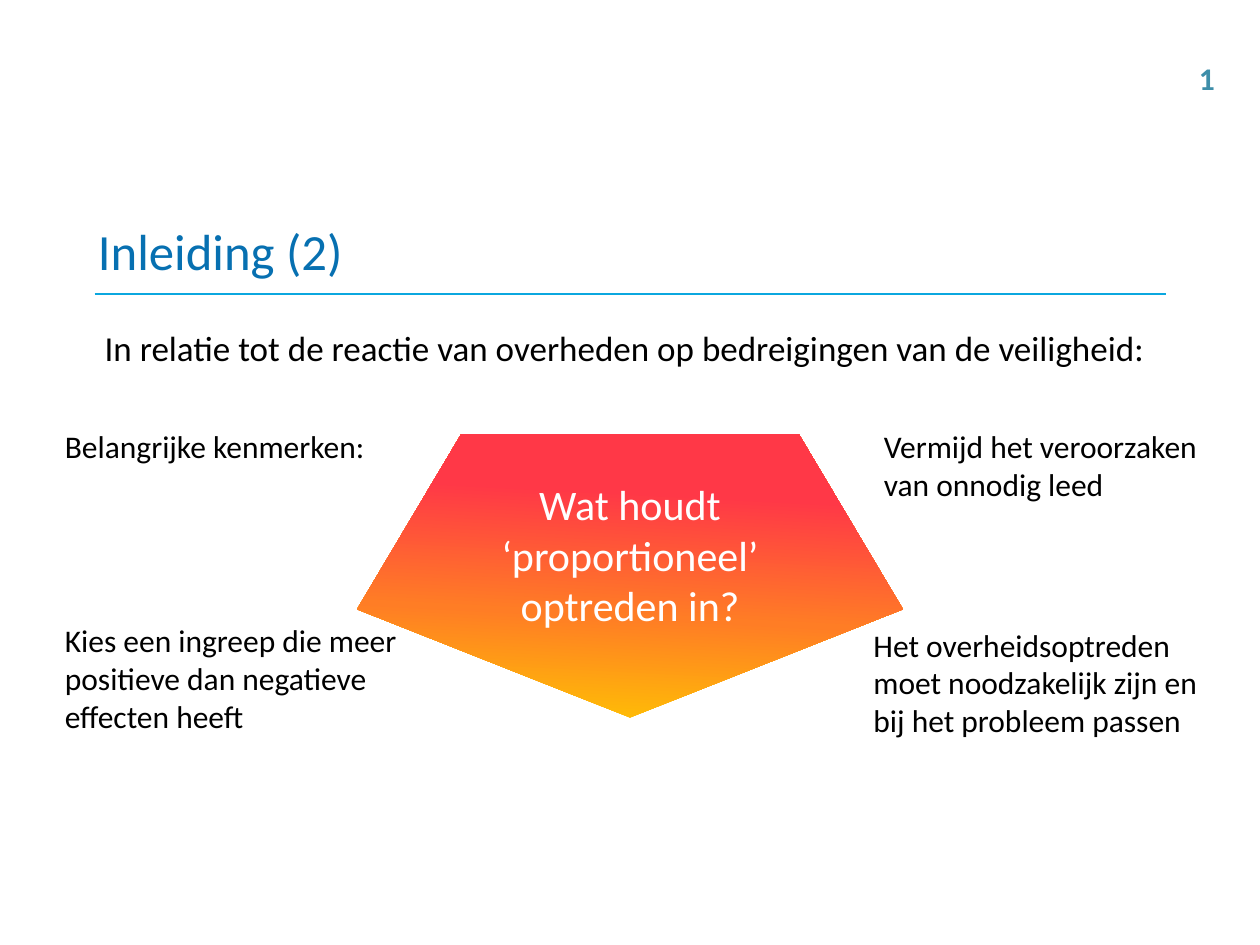
from lxml import etree
from pptx import Presentation
from pptx import util as u
from pptx.dml.color import RGBColor
from pptx.enum import shapes, text
from pptx.oxml.ns import qn

COLORS = {
    "white": "FFFFFF", "black": "000000", "title": "0770B1", "rule": "0BA7DF",
    "number": "3E8EA9", "yellow": "FFC203", "orange": "FF7D25", "red": "FF3847",
}


def rgb(name):
    return RGBColor.from_string(COLORS[name])


class Deck:
    """Holds the presentation, its font and the current slide."""

    font = "Calibri"

    def __init__(self, width, height):
        self.prs = Presentation()
        self.prs.slide_width, self.prs.slide_height = u.Pt(width), u.Pt(height)
        self.s = self.prs.slides.add_slide(self.prs.slide_layouts[6])

    def set_text(self, sp, words, size, color, align, bold=False):
        p = sp.text_frame.paragraphs[0]
        p.text = words
        p.alignment = align
        p.font.name, p.font.size, p.font.bold = self.font, u.Pt(size), bold
        p.font.color.rgb = rgb(color)

    def shape(self, kind, box):
        sp = self.s.shapes.add_shape(kind, *map(u.Pt, box))
        sp.shadow.inherit = False
        sp.line.fill.background()
        return sp

    def rule(self, x1, x2, y):
        cx = self.s.shapes.add_connector(
            shapes.MSO_CONNECTOR.STRAIGHT, u.Pt(x1), u.Pt(y), u.Pt(x2), u.Pt(y))
        cx.line.color.rgb, cx.line.width = rgb("rule"), u.Pt(0.75)
        etree.SubElement(cx._element.spPr, qn("a:effectLst"))

    def title(self, words, box):
        """Title on a white panel of 90% opacity."""
        sp = self.shape(shapes.MSO_SHAPE.RECTANGLE, box)
        sp.fill.solid()
        sp.fill.fore_color.rgb = rgb("white")
        clr = sp._element.spPr.find(".//" + qn("a:srgbClr"))
        etree.SubElement(clr, qn("a:alpha"), val="90000")
        tf = sp.text_frame
        tf.vertical_anchor = text.MSO_ANCHOR.MIDDLE
        tf.margin_left = tf.margin_right = u.Pt(5)
        tf.margin_top = tf.margin_bottom = u.Pt(2.5)
        self.set_text(sp, words, 29, "title", text.PP_ALIGN.LEFT)

    def pentagon(self, box, stops):
        """Pentagon pointing down, with a gradient of (percent, colour) stops."""
        sp = self.shape(shapes.MSO_SHAPE.REGULAR_PENTAGON, box)
        sp.rotation = 180
        sp.fill.gradient()
        sp.fill.gradient_angle = 267
        gs_list = sp._element.spPr.find(".//" + qn("a:gsLst"))
        for gs in list(gs_list):
            gs_list.remove(gs)
        for percent, color in stops:
            gs = etree.SubElement(gs_list, qn("a:gs"), pos=str(percent * 1000))
            etree.SubElement(gs, qn("a:srgbClr"), val=COLORS[color])

    def label(self, words, box, size=18, color="black", bold=False,
              align=text.PP_ALIGN.LEFT, wrap=True):
        sp = self.s.shapes.add_textbox(*map(u.Pt, box))
        sp.text_frame.word_wrap = wrap
        sp.text_frame.auto_size = text.MSO_AUTO_SIZE.SHAPE_TO_FIT_TEXT
        self.set_text(sp, words, size, color, align, bold)


def main():
    center = text.PP_ALIGN.CENTER
    deck = Deck(720, 540)
    deck.rule(54, 666, 168)
    deck.title("Inleiding (2)", (51, 123, 612, 40.5))
    deck.pentagon((204, 248, 312, 162),
                  [(0, "yellow"), (37, "orange"), (77, "red")])
    deck.label("Wat houdt ‘proportioneel’ optreden in?", (243, 270, 234, 94),
               size=24, color="white", align=center)
    deck.label("In relatie tot de reactie van overheden op bedreigingen "
               "van de veiligheid:", (51, 183, 612, 31.5), size=20, align=center)
    for words, box in [
        ("Belangrijke kenmerken:", (30, 240.5, 198, 29)),
        ("Vermijd het veroorzaken van onnodig leed", (498, 240.5, 198, 51)),
        ("Kies een ingreep die meer positieve dan negatieve effecten heeft",
         (30, 351.5, 213, 73)),
        ("Het overheidsoptreden moet noodzakelijk zijn en bij het probleem passen",
         (492, 354, 204, 73)),
    ]:
        deck.label(words, box)
    deck.label("1", (678, 30, 24, 29), color="number", bold=True, wrap=False)
    deck.prs.save("out.pptx")


if __name__ == "__main__":
    main()
